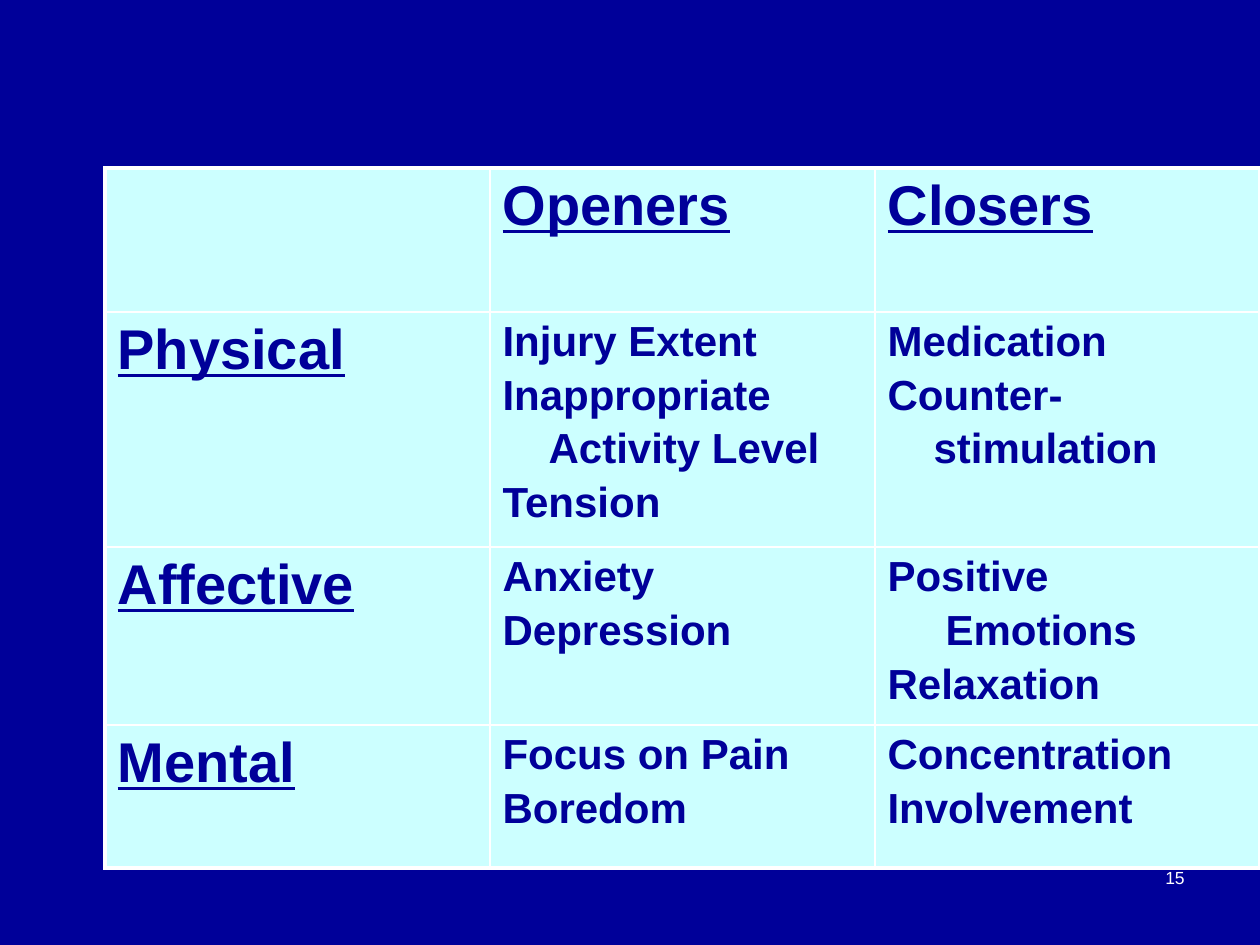
from lxml import etree
from pptx import Presentation, util as u
from pptx.dml.color import RGBColor
from pptx.enum import text
from pptx.oxml import ns

NAVY = RGBColor(0x00, 0x00, 0x99)
ICE = RGBColor(0xCC, 0xFF, 0xFF)
WHITE = RGBColor(0xFF, 0xFF, 0xFF)
FONT = "Arial"
OUTER, INNER = 2.25, 1
HEADING = dict(size=32, bold=True, underline=True, color=NAVY)
ITEM = dict(size=24, bold=True, color=NAVY, gap=4)
ROW_HEIGHTS = [144, 225, 171, 143]
ROWS = [
    ("", ["Openers"], ["Closers"]),
    ("Physical",
     ["Injury Extent", "Inappropriate", ("Activity Level", 46), "Tension"],
     ["Medication", "Counter-", ("stimulation", 46)]),
    ("Affective", ["Anxiety", "Depression"],
     ["Positive", ("Emotions", 58), "Relaxation"]),
    ("Mental", ["Focus on Pain", "Boredom"], ["Concentration", "Involvement"]),
]


def px(n):
    """Convert pixels at 126 to the inch into EMU."""
    return u.Emu(round(n * 914400 / 126))


def write(tf, lines, size, color, bold=False, underline=False, gap=0,
          align=text.PP_ALIGN.LEFT):
    """Write lines, each a string or a (string, indent) pair, into a text frame."""
    for i, line in enumerate(lines):
        label, indent = (line, 0) if isinstance(line, str) else line
        p = tf.add_paragraph() if i else tf.paragraphs[0]
        p.alignment = align
        if indent:
            p._p.get_or_add_pPr().set("marL", str(px(indent)))
        if i:
            p.space_before = u.Pt(gap)
        r = p.add_run()
        r.text = label
        r.font.name, r.font.size = FONT, u.Pt(size)
        r.font.bold, r.font.underline = bold, underline
        r.font.color.rgb = color


def set_borders(cell, **widths):
    """Draw white cell borders with the point widths given for L, R, T and B."""
    tcPr = cell._tc.get_or_add_tcPr()
    for side, width in widths.items():
        ln = etree.SubElement(tcPr, ns.qn(f"a:ln{side}"), w=str(u.Pt(width)))
        fill = etree.SubElement(ln, ns.qn("a:solidFill"))
        etree.SubElement(fill, ns.qn("a:srgbClr"), val=str(WHITE))


def add_gate_table(s, x, y, w):
    """Add the table of openers and closers in a box of the given width."""
    n_rows, n_cols = len(ROWS), len(ROWS[0])
    frame = s.shapes.add_table(n_rows, n_cols, px(x), px(y), px(w),
                               px(sum(ROW_HEIGHTS)))
    table = frame.table
    table.first_row = table.horz_banding = False
    for col in table.columns:
        col.width = px(w / n_cols)
    for i, (height, (name, *groups)) in enumerate(zip(ROW_HEIGHTS, ROWS)):
        table.rows[i].height = px(height)
        for j, lines in enumerate([[name] if name else [], *groups]):
            cell = table.cell(i, j)
            set_borders(cell,
                        L=INNER if j else OUTER,
                        R=OUTER if j == n_cols - 1 else INNER,
                        T=INNER if i else OUTER,
                        B=OUTER if i == n_rows - 1 else INNER)
            cell.fill.solid()
            cell.fill.fore_color.rgb = ICE
            write(cell.text_frame, lines, **(ITEM if i and j else HEADING))


def add_page_number(s, x, y, w, h, number):
    """Add the right-aligned page number in the given box."""
    tf = s.shapes.add_textbox(px(x), px(y), px(w), px(h)).text_frame
    tf.word_wrap = True
    write(tf, [number], size=10, color=WHITE, align=text.PP_ALIGN.RIGHT)


def main():
    """Build and save the slide."""
    prs = Presentation()
    prs.slide_width, prs.slide_height = px(1260), px(945)
    s = prs.slides.add_slide(prs.slide_layouts[6])
    s.background.fill.solid()
    s.background.fill.fore_color.rgb = NAVY
    add_page_number(s, 903, 861, 294, 66, "15")
    add_gate_table(s, 105, 168, 1155)
    prs.save("out.pptx")


if __name__ == "__main__":
    main()
